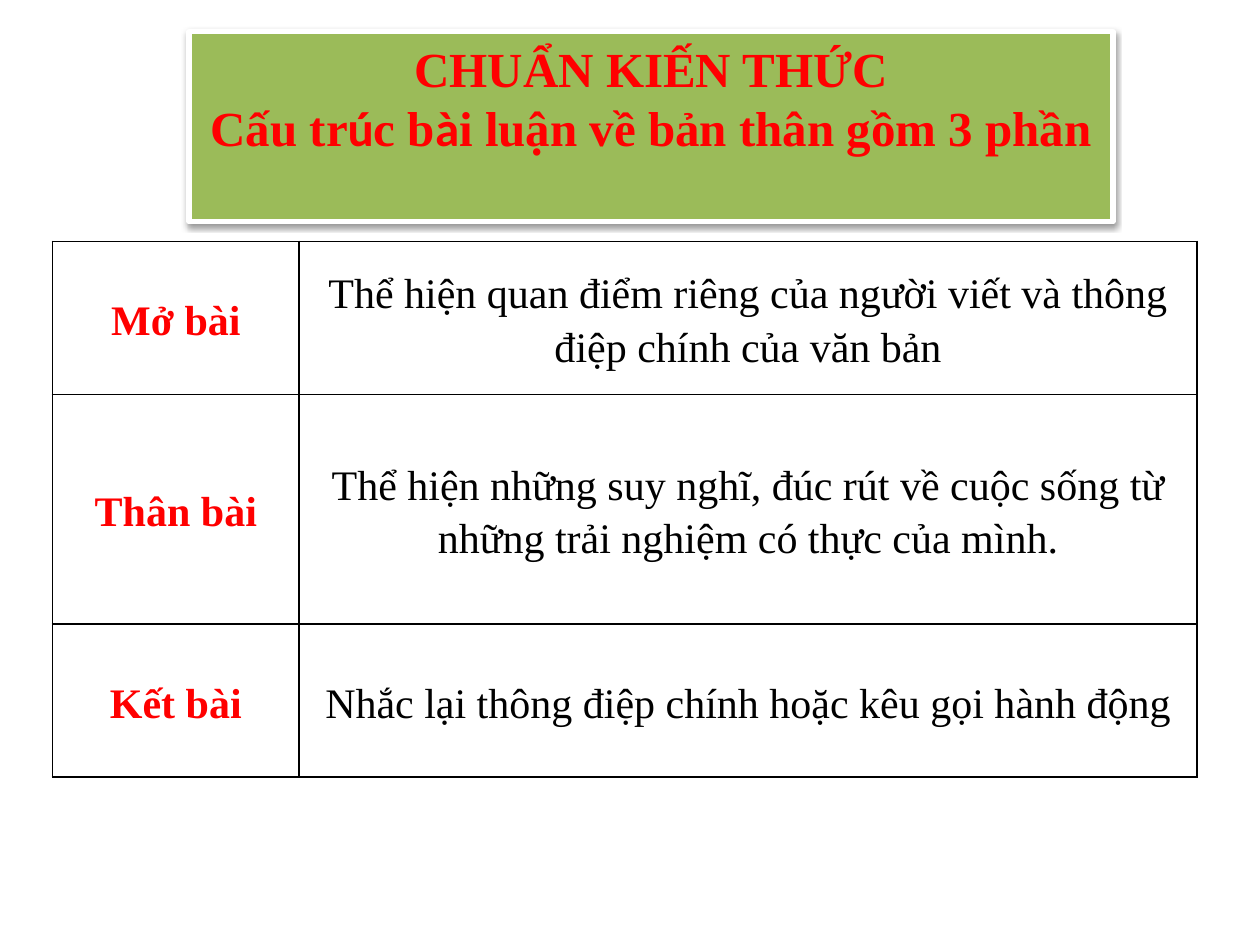
from lxml import etree
from pptx import Presentation
from pptx import util as u
from pptx.dml.color import RGBColor
from pptx.enum import text
from pptx.oxml import ns

RED, BLACK, WHITE, GREEN = "FF0000", "000000", "FFFFFF", "9BBB59"
SERIF, SANS = "Times New Roman", "Calibri"


def colour(value):
    return RGBColor.from_string(value)


def add_node(parent, tag, **attributes):
    values = {name: str(value) for name, value in attributes.items()}
    return etree.SubElement(parent, ns.qn(tag), values)


def apply(target, values):
    for name, value in values.items():
        setattr(target, name, value)


class SlideBuilder:
    title_font = {"size": u.Pt(28), "bold": True}
    cell_font = {"size": u.Pt(24), "name": SERIF}
    frame_format = {"word_wrap": True, "auto_size": text.MSO_AUTO_SIZE.NONE,
                    "vertical_anchor": text.MSO_ANCHOR.TOP,
                    "margin_top": u.Pt(4), "margin_bottom": u.Pt(4)}
    cell_format = {"vertical_anchor": text.MSO_ANCHOR.MIDDLE,
                   "margin_left": u.Pt(5), "margin_right": u.Pt(5),
                   "margin_top": 0, "margin_bottom": 0}

    def __init__(self, page):
        self.page = page

    def add_span(self, para, content, ink, **font):
        span = para.add_run()
        span.text = content
        apply(span.font, font)
        span.font.color.rgb = colour(ink)

    def shadow(self, box):
        effects = add_node(box._element.spPr, "a:effectLst")
        outer = add_node(effects, "a:outerShdw", blurRad=u.Pt(3.1), dist=u.Pt(1.6),
                         dir=90 * 60000, rotWithShape=0)
        add_node(add_node(outer, "a:srgbClr", val=BLACK), "a:alpha", val=38000)

    def title(self, place, lines):
        box = self.page.shapes.title
        apply(box, dict(zip(("left", "top", "width", "height"), map(u.Pt, place))))
        box.fill.solid()
        box.fill.fore_color.rgb = colour(GREEN)
        box.line.color.rgb = colour(WHITE)
        box.line.width = u.Pt(3)
        self.shadow(box)
        frame = box.text_frame
        apply(frame, self.frame_format)
        for index, spans in enumerate(lines):
            para = frame.add_paragraph() if index else frame.paragraphs[0]
            para.alignment = text.PP_ALIGN.CENTER
            for content, face in spans:
                self.add_span(para, content, RED, name=face, **self.title_font)

    def borders(self, cell):
        properties = cell._tc.get_or_add_tcPr()
        for side in "LRTB":
            edge = add_node(properties, f"a:ln{side}", w=u.Pt(1))
            add_node(add_node(edge, "a:solidFill"), "a:srgbClr", val=BLACK)

    def cell(self, cell, content, ink, bold):
        self.borders(cell)
        cell.fill.solid()
        cell.fill.fore_color.rgb = colour(WHITE)
        apply(cell, self.cell_format)
        para = cell.text_frame.paragraphs[0]
        apply(para, {"alignment": text.PP_ALIGN.CENTER, "line_spacing": 1.15})
        self.add_span(para, content, ink, bold=bold, **self.cell_font)

    def table(self, left, top, widths, heights, rows):
        table = self.page.shapes.add_table(
            len(rows), len(widths), u.Pt(left), u.Pt(top),
            u.Pt(sum(widths)), u.Pt(sum(heights))).table
        apply(table, {"first_row": False, "horz_banding": False})
        for column, width in zip(table.columns, widths):
            column.width = u.Pt(width)
        for row, height, (part, purpose) in zip(table.rows, heights, rows):
            row.height = u.Pt(height)
            self.cell(row.cells[0], part, RED, True)
            self.cell(row.cells[1], purpose, BLACK, False)


def main():
    deck = Presentation()
    deck.slide_width, deck.slide_height = u.Pt(720), u.Pt(540)
    builder = SlideBuilder(deck.slides.add_slide(deck.slide_layouts[5]))

    # Heading panel
    builder.title((108, 18, 528, 108.7), [
        [("CHUẨN KIẾN THỨC", SERIF)],
        [("Cấu tr", SERIF), ("ú", SANS), ("c b", SERIF), ("à", SANS),
         ("i luận về bản thân gồm 3 phần", SERIF)],
    ])

    # Parts of the essay
    builder.table(30, 138, (141, 513), (87.5, 131, 87.5), [
        ("Mở bài", "Thể hiện quan điểm riêng của người viết và thông điệp chính của văn bản"),
        ("Thân bài", "Thể hiện những suy nghĩ, đúc rút về cuộc sống từ những trải nghiệm "
                     "có thực của mình."),
        ("Kết bài", "Nhắc lại thông điệp chính hoặc kêu gọi hành động"),
    ])
    deck.save("out.pptx")


if __name__ == "__main__":
    main()
